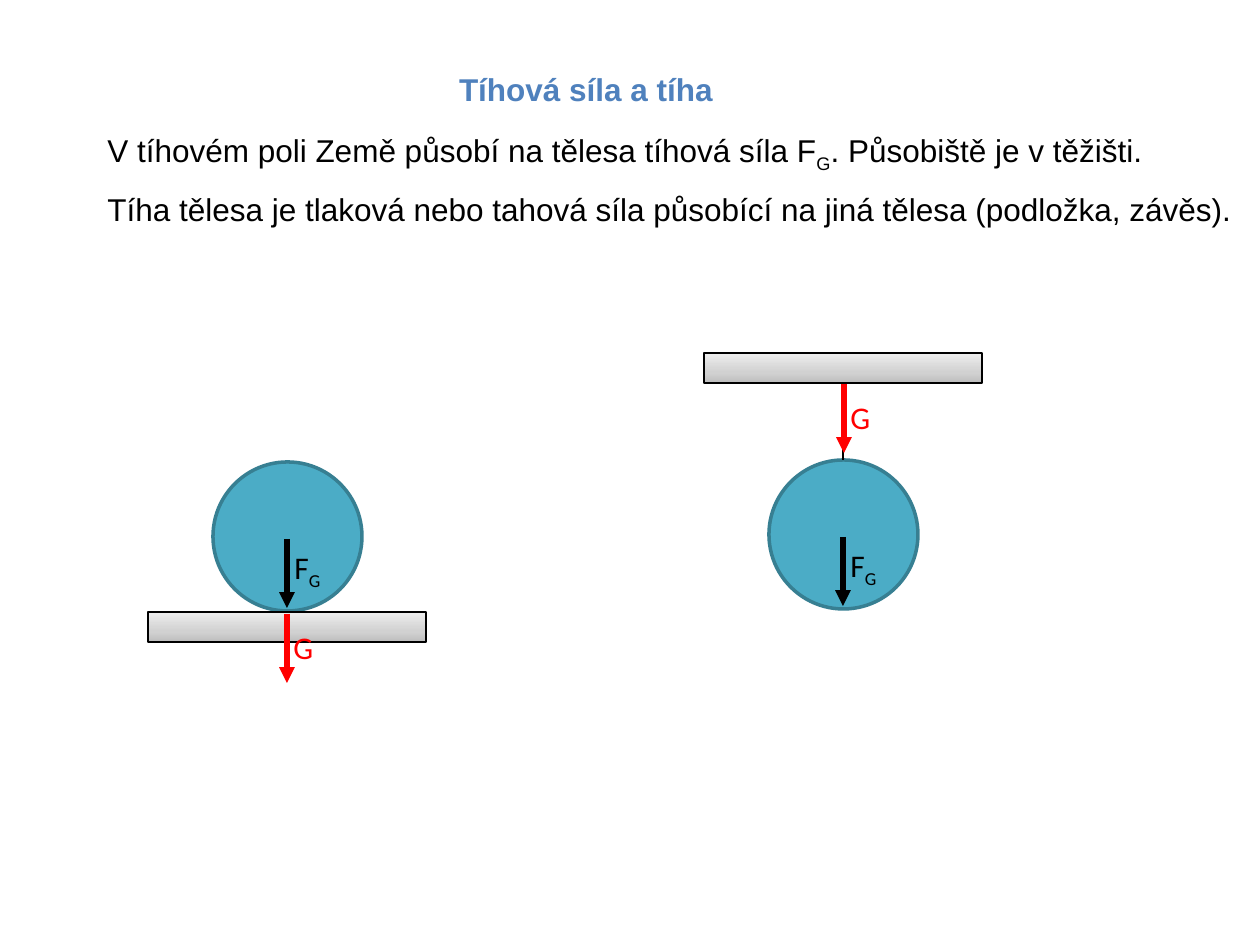
import copy
from dataclasses import dataclass

import pptx
import pptx.dml.color
import pptx.enum.dml
import pptx.enum.shapes
import pptx.enum.text
import pptx.oxml.ns
import pptx.util
from lxml import etree

PX = 914400 // 126
COLORS = {"title": "4F81BD", "black": "000000", "white": "FFFFFF", "red": "FF0000",
          "ball": "4BACC6", "ball_edge": "377F92"}
PLATE_STOPS = ((0, "BDBDBD"), (0.35, "D1D1D1"), (1, "EEEEEE"))
SHAPES = pptx.enum.shapes.MSO_SHAPE
ALIGN = pptx.enum.text.PP_ALIGN
BALL, ARROW = 149, 69
PLATE_W, PLATE_H = 278, 30


@dataclass
class Text:
    x: int
    y: int
    w: int
    words: tuple[str, ...]
    color: str = "black"
    font: str = "Arial"
    bold: bool = False
    align: ALIGN = ALIGN.LEFT
    fill: str = ""


@dataclass
class Force:
    x: int
    y: int
    words: tuple[str, ...]
    color: str
    label_dx: int
    label_dy: int
    label_w: int


def weight(x: int, y: int) -> Force:
    return Force(x, y, ("G",), "red", -6, 8, 118)


def rgb(value: str) -> pptx.dml.color.RGBColor:
    return pptx.dml.color.RGBColor.from_string(value)


def px(*lengths: int) -> list[int]:
    return [n * PX for n in lengths]


def set_line(sp, color: str, width: float) -> None:
    sp.line.color.rgb = rgb(COLORS[color])
    sp.line.width = pptx.util.Pt(width)


def add_text(shapes, text: Text) -> None:
    """Draw one line of text; every second run is a subscript."""
    box = px(text.x, text.y, text.w, 50)
    if text.fill:
        sp = shapes.add_shape(SHAPES.RECTANGLE, *box)
        sp.shadow.inherit = False
        sp.fill.solid()
        sp.fill.fore_color.rgb = rgb(COLORS[text.fill])
        sp.line.fill.background()
    else:
        sp = shapes.add_textbox(*box)
    tf = sp.text_frame
    tf.word_wrap = True
    tf.vertical_anchor = pptx.enum.text.MSO_ANCHOR.TOP
    p = tf.paragraphs[0]
    p.alignment = text.align
    style = {"name": text.font, "size": pptx.util.Pt(18), "bold": text.bold}
    for i, words in enumerate(text.words):
        r = p.add_run()
        r.text = words
        for name, value in style.items():
            setattr(r.font, name, value)
        r.font.color.rgb = rgb(COLORS[text.color])
        if i % 2:
            r._r.get_or_add_rPr().set("baseline", "-25000")


def add_line(shapes, x: int, y: int, length: int, color: str, width: float,
             arrow: bool = False) -> None:
    """Draw a line straight down from x, y."""
    line = shapes.add_connector(pptx.enum.shapes.MSO_CONNECTOR.STRAIGHT,
                                *px(x, y, x, y + length))
    set_line(line, color, width)
    if arrow:
        etree.SubElement(line.line._get_or_add_ln(), pptx.oxml.ns.qn("a:tailEnd"),
                         type="triangle")
    etree.SubElement(line._element.spPr, pptx.oxml.ns.qn("a:effectLst"))


def add_force(shapes, force: Force) -> None:
    add_line(shapes, force.x, force.y, ARROW, force.color, 3, arrow=True)
    add_text(shapes, Text(force.x + force.label_dx, force.y + force.label_dy,
                          force.label_w, force.words, force.color, "Calibri"))


def add_ball(shapes, x: int, y: int) -> None:
    """Draw a ball with gravity acting from its centre."""
    sp = shapes.add_shape(SHAPES.OVAL, *px(x, y, BALL, BALL))
    sp.shadow.inherit = False
    sp.fill.solid()
    sp.fill.fore_color.rgb = rgb(COLORS["ball"])
    set_line(sp, "ball_edge", 2)
    add_force(shapes, Force(x + BALL // 2, y + 77, ("F", "G"), "black", -5, 3, 238))


def add_plate(shapes, x: int, y: int) -> None:
    sp = shapes.add_shape(SHAPES.RECTANGLE, *px(x, y, PLATE_W, PLATE_H))
    sp.shadow.inherit = False
    sp.fill.gradient()
    sp.fill.gradient_angle = 90
    stops = sp._element.spPr.find(".//" + pptx.oxml.ns.qn("a:gsLst"))
    stops.append(copy.deepcopy(stops[-1]))
    for stop, (position, color) in zip(sp.fill.gradient_stops, PLATE_STOPS):
        stop.position = position
        stop.color.rgb = rgb(color)
    set_line(sp, "black", 0.75)


TITLE = Text(115, 64, 942, ("Tíhová síla a tíha",), "title", bold=True, align=ALIGN.CENTER)
GRAVITY = Text(95, 125, 1150, ("V tíhovém poli Země působí na tělesa tíhová síla F", "G",
                               ". Působiště je v těžišti."), fill="white")
WEIGHT = Text(95, 184, 1150, ("Tíha tělesa je tlaková nebo tahová síla působící na jiná "
                              "tělesa (podložka, závěs).",), fill="white")
BALLS = ((213, 462), (769, 460))
PLATES = ((148, 612), (704, 353))
WEIGHTS = (weight(287, 614), weight(844, 384))


def main() -> None:
    prs = pptx.Presentation()
    prs.slide_width, prs.slide_height = pptx.util.Inches(10), pptx.util.Inches(7.5)
    s = prs.slides.add_slide(prs.slide_layouts[6])
    add_text(s.shapes, TITLE)
    add_text(s.shapes, GRAVITY)
    for x, y in BALLS:
        add_ball(s.shapes.add_group_shape().shapes, x, y)
    for x, y in PLATES:
        add_plate(s.shapes, x, y)
    add_line(s.shapes, 843, 383, 77, "black", 1.5)
    add_text(s.shapes, WEIGHT)
    for force in WEIGHTS:
        add_force(s.shapes.add_group_shape().shapes, force)
    prs.save("out.pptx")


if __name__ == "__main__":
    main()
